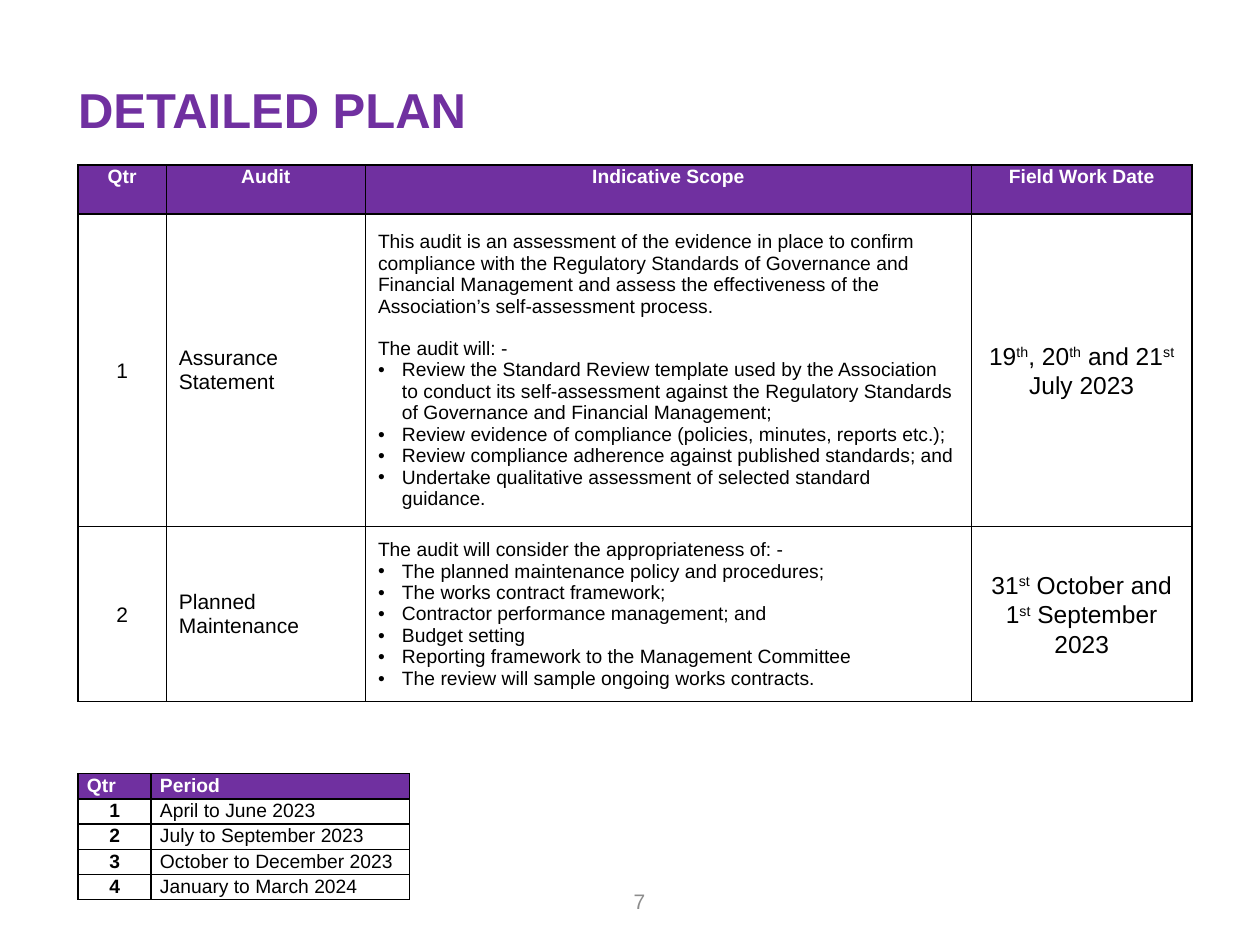
"""Build the detailed audit plan slide with its quarter key."""
import pptx
import pptx.util
import pptx.dml.color
import pptx.enum.text
import pptx.oxml
import pptx.oxml.ns
from lxml import etree

Inches, Pt = pptx.util.Inches, pptx.util.Pt
RGBColor = pptx.dml.color.RGBColor
ALIGN, ANCHOR = pptx.enum.text.PP_ALIGN, pptx.enum.text.MSO_ANCHOR
qn = pptx.oxml.ns.qn

PURPLE = RGBColor(0x70, 0x30, 0xA0)
WHITE = RGBColor(0xFF, 0xFF, 0xFF)
BLACK = RGBColor(0, 0, 0)
GREY = RGBColor(0x8C, 0x8C, 0x8C)
LEFT = 0.62

TITLE = "DETAILED PLAN"
PAGE = "7"
PLAN_HEAD = ["Qtr", "Audit", "Indicative Scope", "Field Work Date"]
PLAN = [
    {
        "qtr": "1",
        "audit": "Assurance Statement",
        "intro": [
            "This audit is an assessment of the evidence in place to confirm compliance with the "
            "Regulatory Standards of Governance and Financial Management and assess the "
            "effectiveness of the Association’s self-assessment process.",
            "The audit will: -",
        ],
        "points": [
            "Review the Standard Review template used by the Association to conduct its "
            "self-assessment against the Regulatory Standards of Governance and Financial "
            "Management;",
            "Review evidence of compliance (policies, minutes, reports etc.);",
            "Review compliance adherence against published standards; and",
            "Undertake qualitative assessment of selected standard guidance.",
        ],
        "date": ["19", "th", ", 20", "th", " and 21", "st", " July 2023"],
    },
    {
        "qtr": "2",
        "audit": "Planned Maintenance",
        "intro": ["The audit will consider the appropriateness of: -"],
        "points": [
            "The planned maintenance policy and procedures;",
            "The works contract framework;",
            "Contractor performance management; and",
            "Budget setting",
            "Reporting framework to the Management Committee",
            "The review will sample ongoing works contracts.",
        ],
        "date": ["31", "st", " October and 1", "st", " September 2023"],
    },
]
PERIODS = [
    ("Qtr", "Period"),
    ("1", "April to June 2023"),
    ("2", "July to September 2023"),
    ("3", "October to December 2023"),
    ("4", "January to March 2024"),
]
PLAN_COLS, PLAN_ROWS = [0.7, 1.58, 4.81, 1.75], [0.39, 2.48, 1.39]
KEY_COLS, KEY_ROWS = [0.58, 2.05], [0.2] * len(PERIODS)


def add_run(p, text, size, color=BLACK, bold=False):
    r = p.add_run()
    r.text = text
    r.font.name, r.font.size, r.font.bold = "Arial", Pt(size), bold
    r.font.color.rgb = color
    return r


def write(p, text, size, color=BLACK, bold=False, align=None, spacing=None, before=None):
    p.alignment, p.line_spacing = align, spacing
    if before:
        p.space_before = Pt(before)
    if isinstance(text, str):
        text = [text]
    for i, part in enumerate(text):
        r = add_run(p, part, size, color, bold)
        if i % 2:
            r.font._element.set("baseline", "30000")


def add_bullet(p):
    pPr = p._p.get_or_add_pPr()
    pPr.set("marL", str(Inches(0.19)))
    pPr.set("indent", str(-Inches(0.19)))
    etree.SubElement(pPr, qn("a:buFont")).set("typeface", "Arial")
    etree.SubElement(pPr, qn("a:buChar")).set("char", "•")


def add_borders(cell):
    tcPr = cell._tc.get_or_add_tcPr()
    for i, side in enumerate(("lnL", "lnR", "lnT", "lnB")):
        ln = pptx.oxml.parse_xml(
            f'<a:{side} xmlns:a="http://schemas.openxmlformats.org/drawingml/2006/main" '
            f'w="{Pt(1)}"><a:solidFill><a:srgbClr val="{BLACK}"/></a:solidFill></a:{side}>')
        tcPr.insert(i, ln)


def set_margins(box, side, end=0):
    box.margin_left = box.margin_right = Inches(side)
    box.margin_top = box.margin_bottom = Inches(end)


def add_grid(s, top, cols, rows):
    frame = s.shapes.add_table(len(rows), len(cols), Inches(LEFT), Inches(top),
                               Inches(sum(cols)), Inches(sum(rows)))
    table = frame.table
    table.horz_banding = False
    for col, width in zip(table.columns, cols):
        col.width = Inches(width)
    for i, (row, height) in enumerate(zip(table.rows, rows)):
        row.height = Inches(height)
        for cell in row.cells:
            if i:
                cell.fill.background()
            else:
                cell.fill.solid()
                cell.fill.fore_color.rgb = PURPLE
            add_borders(cell)
    return table


def add_text(s, box, text, size, color, bold=False, align=None, spacing=None):
    tf = s.shapes.add_textbox(*map(Inches, box)).text_frame
    tf.word_wrap = True
    write(tf.paragraphs[0], text, size, color, bold, align, spacing)
    return tf


def fill_scope(tf, intro, points):
    for i, text in enumerate(intro + points):
        p = tf.add_paragraph() if i else tf.paragraphs[0]
        write(p, text, 11, before=12 if 0 < i < len(intro) else None)
        if i >= len(intro):
            add_bullet(p)


def add_plan(s):
    table = add_grid(s, 1.31, PLAN_COLS, PLAN_ROWS)
    for cell, text in zip(table.rows[0].cells, PLAN_HEAD):
        set_margins(cell, 0.06)
        write(cell.text_frame.paragraphs[0], text, 11, WHITE, True, ALIGN.CENTER, 1.07)
    for i, audit in enumerate(PLAN, 1):
        cells = list(table.rows[i].cells)
        for cell in cells:
            cell.vertical_anchor = ANCHOR.MIDDLE
        qtr, name, scope, date = [cell.text_frame for cell in cells]
        write(qtr.paragraphs[0], audit["qtr"], 12, align=ALIGN.CENTER, spacing=1.07, before=6)
        write(name.paragraphs[0], audit["audit"], 12)
        fill_scope(scope, audit["intro"], audit["points"])
        write(date.paragraphs[0], audit["date"], 14, align=ALIGN.CENTER, spacing=1.07, before=6)


def add_key(s):
    table = add_grid(s, 6.14, KEY_COLS, KEY_ROWS)
    for i, period in enumerate(PERIODS):
        for j, text in enumerate(period):
            cell = table.cell(i, j)
            set_margins(cell, 0.07)
            write(cell.text_frame.paragraphs[0], text, 11, BLACK if i else WHITE,
                  i == 0 or j == 0, ALIGN.CENTER if i and j == 0 else ALIGN.JUSTIFY, 1.07)


def main():
    prs = pptx.Presentation()
    prs.slide_width, prs.slide_height = Inches(10), Inches(7.5)
    s = prs.slides.add_slide(prs.slide_layouts[6])
    set_margins(add_text(s, (LEFT, 0.68, 8.75, 0.42), TITLE, 28, PURPLE, True, spacing=0.9), 0)
    page = add_text(s, (4.77, 6.95, 0.45, 0.4), PAGE, 12, GREY, align=ALIGN.RIGHT)
    page.vertical_anchor = ANCHOR.MIDDLE
    add_plan(s)
    add_key(s)
    prs.save("out.pptx")


if __name__ == "__main__":
    main()
